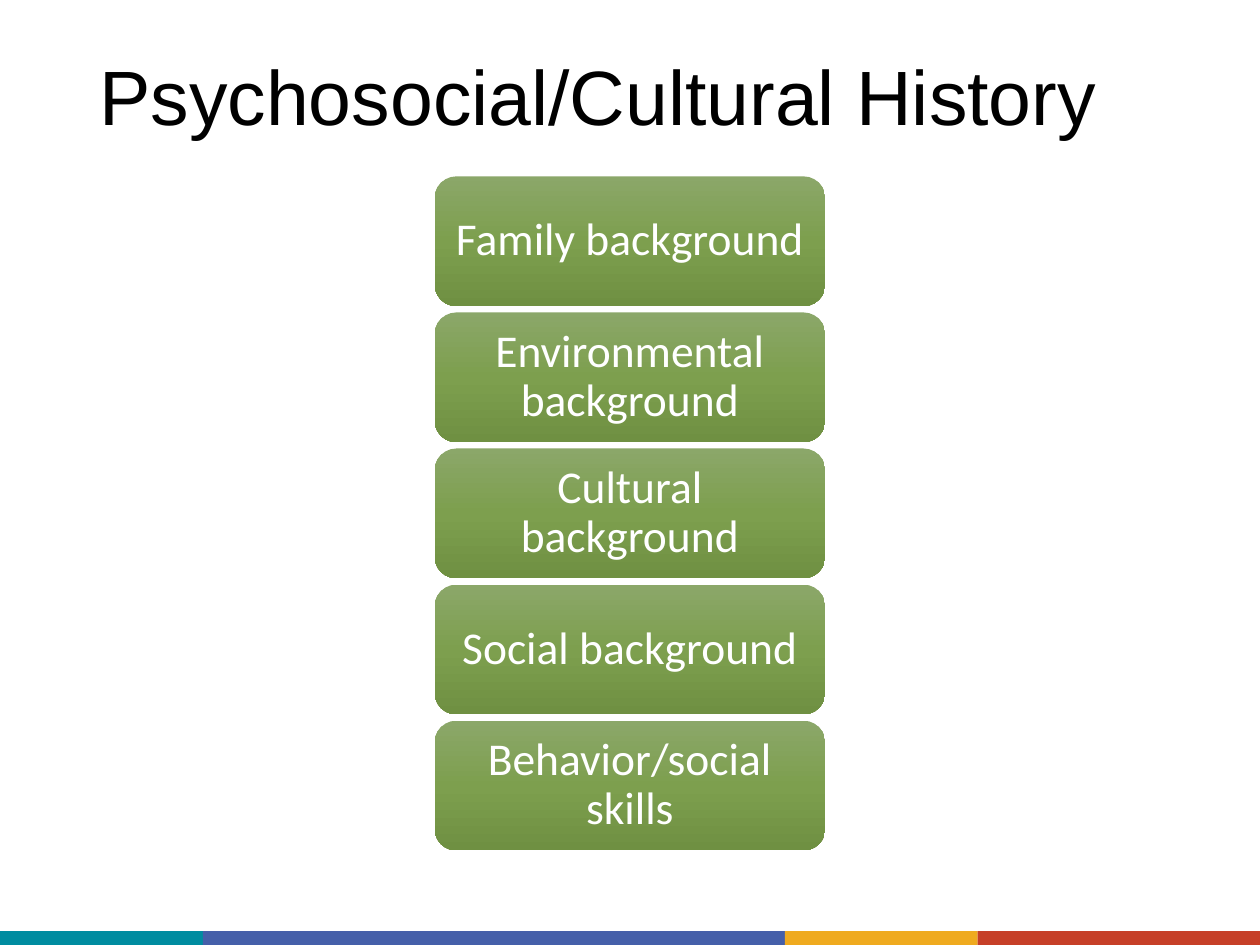
import copy

import pptx
import pptx.dml.color
import pptx.enum.shapes
import pptx.enum.text
import pptx.oxml.ns
import pptx.util

Inches = pptx.util.Inches
Shape = pptx.enum.shapes.MSO_SHAPE
Align = pptx.enum.text.PP_ALIGN

COLORS = {
    "teal": "008CA0", "blue": "455FA9", "gold": "EFAA1F", "red": "C63F28",
    "top": "8BA769", "mid": "7D9F4E", "base": "6F9042",
    "black": "000000", "white": "FFFFFF",
}
STRIPES = [("teal", 1.61), ("blue", 4.62), ("gold", 1.53), ("red", 2.24)]
TOPICS = [
    "Family background",
    "Environmental background",
    "Cultural background",
    "Social background",
    "Behavior/social skills",
]


def color(name):
    return pptx.dml.color.RGBColor.from_string(COLORS[name])


def write(shape, text, font, size, tint, align=Align.LEFT, inset=(0.1, 0.05)):
    frame = shape.text_frame
    frame.word_wrap = True
    frame.vertical_anchor = pptx.enum.text.MSO_ANCHOR.MIDDLE
    frame.margin_left = frame.margin_right = Inches(inset[0])
    frame.margin_top = frame.margin_bottom = Inches(inset[1])
    para = frame.paragraphs[0]
    para.alignment = align
    para.line_spacing = 0.9
    run = para.add_run()
    run.text = text
    run.font.name = font
    run.font.size = pptx.util.Pt(size)
    run.font.color.rgb = color(tint)


def block(slide, kind, left, top, width, height):
    """Add a preset shape with no line and no shadow."""
    shape = slide.shapes.add_shape(
        kind, Inches(left), Inches(top), Inches(width), Inches(height))
    shape.shadow.inherit = False
    shape.line.fill.background()
    return shape


def shade(shape):
    """Fill a shape with the three-stop green gradient, top to bottom."""
    fill = shape.fill
    fill.gradient()
    fill.gradient_angle = 270
    first = shape._element.spPr.find(".//" + pptx.oxml.ns.qn("a:gs"))
    first.addnext(copy.deepcopy(first))
    for stop, name, place in zip(
            fill.gradient_stops, ("top", "mid", "base"), (0, 0.5, 1)):
        stop.color.rgb = color(name)
        stop.position = place


def footer(slide):
    left = 0
    for name, width in STRIPES:
        stripe = block(slide, Shape.RECTANGLE, left, 7.39, width, 0.11)
        stripe.fill.solid()
        stripe.fill.fore_color.rgb = color(name)
        left += width


def title(slide, text):
    box = slide.shapes.add_textbox(
        Inches(0.69), Inches(0.4), Inches(8.62), Inches(0.8))
    write(box, text, font="Arial", size=44, tint="black")


def stack(slide, topics):
    for row, topic in enumerate(topics):
        card = block(
            slide, Shape.ROUNDED_RECTANGLE, 3.45, 1.4 + row * 1.08, 3.1, 1.03)
        shade(card)
        write(card, topic, font="Calibri", size=26, tint="white",
              align=Align.CENTER, inset=(0.11, 0.05))


def main():
    deck = pptx.Presentation()
    deck.slide_width, deck.slide_height = Inches(10), Inches(7.5)
    slide = deck.slides.add_slide(deck.slide_layouts[6])
    footer(slide)
    title(slide, "Psychosocial/Cultural History")
    stack(slide, TOPICS)
    deck.save("out.pptx")


if __name__ == "__main__":
    main()
